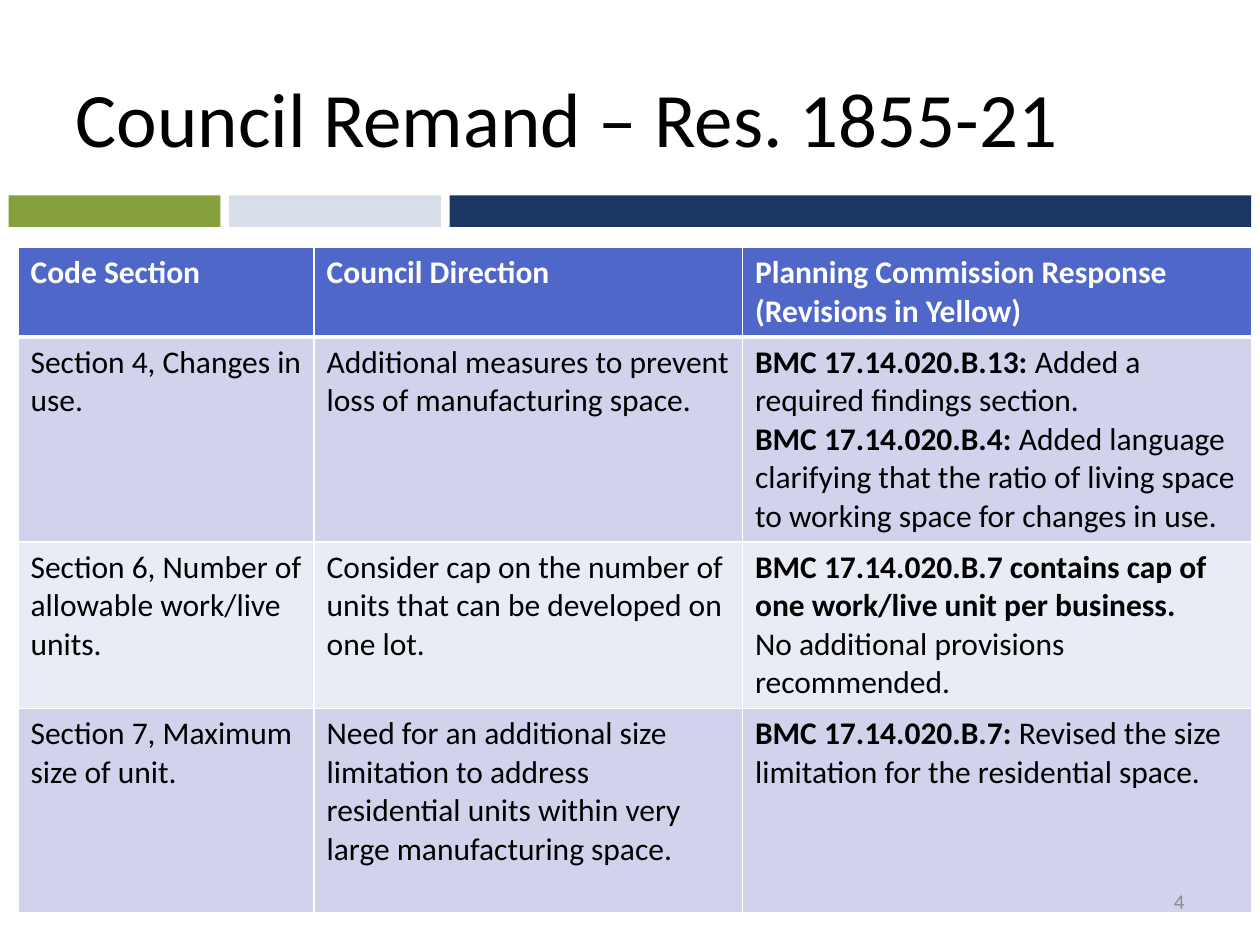
import pptx
import pptx.dml.color
import pptx.enum.shapes
import pptx.enum.text
import pptx.oxml
import pptx.oxml.ns
import pptx.util

Pt = pptx.util.Pt
RGBColor = pptx.dml.color.RGBColor

FONT = "Calibri"
BLACK = RGBColor(0x00, 0x00, 0x00)
WHITE = RGBColor(0xFF, 0xFF, 0xFF)
GRAY = RGBColor(0x8C, 0x8C, 0x8C)
NAVY = RGBColor(0x1A, 0x36, 0x62)
GREEN = RGBColor(0x86, 0xA1, 0x3C)
PALE_BLUE = RGBColor(0xD7, 0xDE, 0xEA)
HEADER_BLUE = RGBColor(0x4E, 0x67, 0xC8)
BANDS = (RGBColor(0xD0, 0xD3, 0xEB), RGBColor(0xE9, 0xEB, 0xF5))

COLUMN_WIDTHS = (169.2, 244.8, 290.88)
ROW_HEIGHTS = (51, 117.2, 95.2, 116.6)

# Each cell is a list of paragraphs, each paragraph a (bold, regular) pair.
HEADER = (
    [("Code Section", "")],
    [("Council Direction", "")],
    [("Planning Commission Response", ""), ("(Revisions in Yellow)", "")],
)
BODY = (
    (
        [("", "Section 4, Changes in use.")],
        [("", "Additional measures to prevent loss of manufacturing space.")],
        [
            ("BMC 17.14.020.B.13: ", "Added a required findings section."),
            ("BMC 17.14.020.B.4: ", "Added language clarifying that the ratio of "
             "living space to working space for changes in use."),
        ],
    ),
    (
        [("", "Section 6, Number of allowable work/live units.")],
        [("", "Consider cap on the number of units that can be developed on one lot.")],
        [
            ("BMC 17.14.020.B.7 contains cap of one work/live unit per business.", ""),
            ("", "No additional provisions recommended."),
        ],
    ),
    (
        [("", "Section 7, Maximum size of unit.")],
        [("", "Need for an additional size limitation to address residential units "
          "within very large manufacturing space.")],
        [("BMC 17.14.020.B.7: ", "Revised the size limitation for the residential space.")],
    ),
)


def set_font(font, size, color):
    """Apply the slide typeface with a size and colour."""
    font.name = FONT
    font.size = Pt(size)
    font.color.rgb = color


def place_title(slide, text, left, top, width, height):
    """Move the title placeholder into its box and format it."""
    title = slide.shapes.title
    title.left, title.top, title.width, title.height = map(Pt, (left, top, width, height))
    title.text_frame.text = text
    title.text_frame.vertical_anchor = pptx.enum.text.MSO_ANCHOR.MIDDLE
    paragraph = title.text_frame.paragraphs[0]
    paragraph.alignment = pptx.enum.text.PP_ALIGN.LEFT
    set_font(paragraph.font, 44, BLACK)


def add_divider(slide, left, top, width, height):
    """Draw two short bars and one long bar that fills the remaining width."""
    short, gap = 121, 5
    step = short + gap
    bars = ((0, short, GREEN), (step, short, PALE_BLUE), (2 * step, width - 2 * step, NAVY))
    for offset, bar_width, color in bars:
        bar = slide.shapes.add_shape(
            pptx.enum.shapes.MSO_SHAPE.RECTANGLE,
            Pt(left + offset), Pt(top), Pt(bar_width), Pt(height),
        )
        bar.shadow.inherit = False
        bar.fill.solid()
        bar.fill.fore_color.rgb = color
        bar.line.fill.background()


def set_borders(cell, top, bottom):
    """Give a cell white borders with the given top and bottom widths."""
    properties = cell._tc.get_or_add_tcPr()
    for side, width in (("L", 1), ("R", 1), ("T", top), ("B", bottom)):
        properties.append(pptx.oxml.parse_xml(
            f'<a:ln{side} {pptx.oxml.ns.nsdecls("a")} w="{Pt(width)}">'
            f'<a:solidFill><a:srgbClr val="{WHITE}"/></a:solidFill></a:ln{side}>'
        ))


def fill_cell(cell, paragraphs, fill, color):
    """Write the bold and regular runs of a cell and colour it."""
    cell.fill.solid()
    cell.fill.fore_color.rgb = fill
    frame = cell.text_frame
    for index, parts in enumerate(paragraphs):
        paragraph = frame.add_paragraph() if index else frame.paragraphs[0]
        set_font(paragraph.font, 18, color)
        for text, bold in zip(parts, (True, False)):
            if text:
                run = paragraph.add_run()
                run.text = text
                run.font.bold = bold


def add_response_table(slide, left, top):
    """Add the table of council directions and commission responses."""
    rows = (HEADER, *BODY)
    table = slide.shapes.add_table(
        len(rows), len(COLUMN_WIDTHS), Pt(left), Pt(top),
        Pt(sum(COLUMN_WIDTHS)), Pt(sum(ROW_HEIGHTS)),
    ).table
    for column, width in zip(table.columns, COLUMN_WIDTHS):
        column.width = Pt(width)
    for index, (row, height, contents) in enumerate(zip(table.rows, ROW_HEIGHTS, rows)):
        row.height = Pt(height)
        fill = BANDS[(index - 1) % 2] if index else HEADER_BLUE
        color = BLACK if index else WHITE
        for cell, paragraphs in zip(row.cells, contents):
            set_borders(cell, 3 if index == 1 else 1, 3 if index == 0 else 1)
            fill_cell(cell, paragraphs, fill, color)


def add_slide_number(slide, number, left, top, width, height):
    """Add the right-aligned slide number."""
    box = slide.shapes.add_textbox(Pt(left), Pt(top), Pt(width), Pt(height))
    frame = box.text_frame
    frame.word_wrap = True
    frame.vertical_anchor = pptx.enum.text.MSO_ANCHOR.MIDDLE
    frame.text = str(number)
    paragraph = frame.paragraphs[0]
    paragraph.alignment = pptx.enum.text.PP_ALIGN.RIGHT
    set_font(paragraph.font, 12, GRAY)


def main():
    """Build and save the presentation."""
    presentation = pptx.Presentation()
    presentation.slide_width = Pt(720)
    presentation.slide_height = Pt(540)
    slide = presentation.slides.add_slide(presentation.slide_layouts.get_by_name("Title Only"))
    place_title(slide, "Council Remand – Res. 1855-21", 36, 21.6, 648, 90)
    add_divider(slide, 5, 111.6, 710, 18)
    add_response_table(slide, 10.3, 141.4)
    add_slide_number(slide, 4, 516, 500.5, 168, 28.75)
    presentation.save("out.pptx")


if __name__ == "__main__":
    main()
